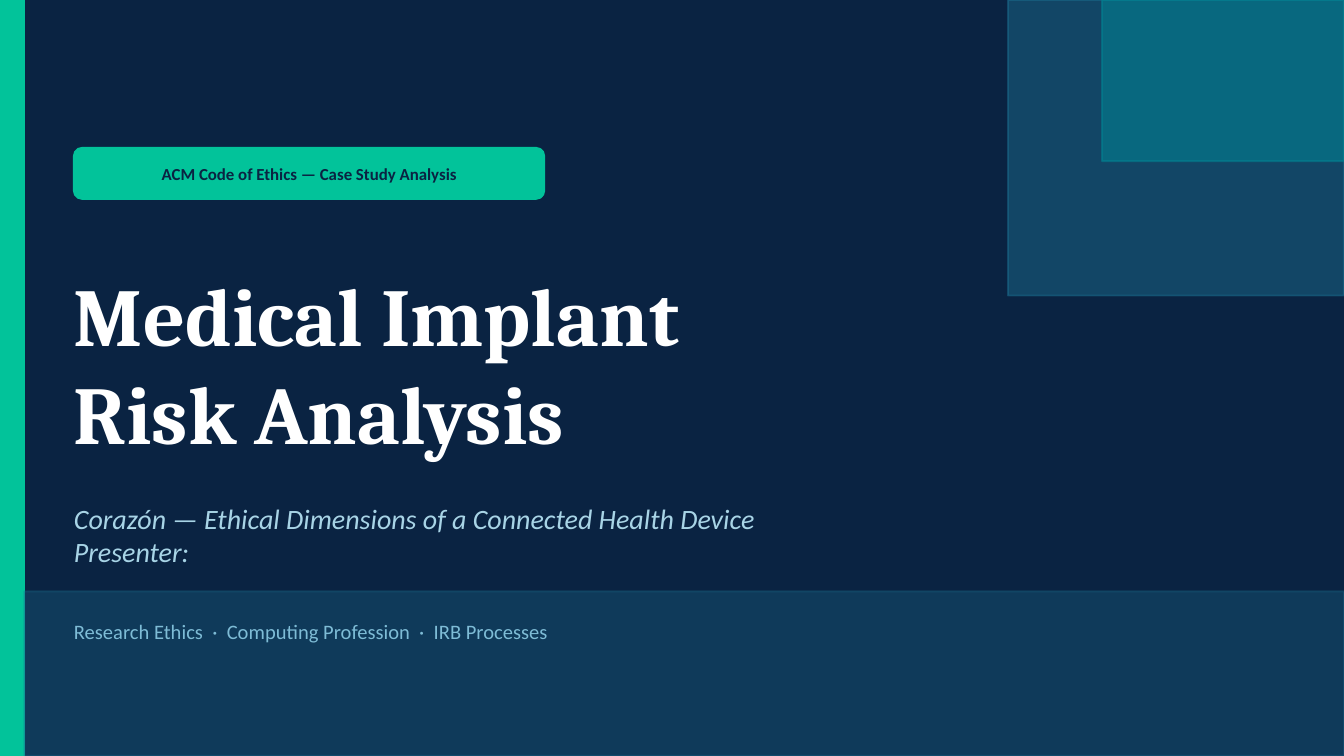
"""Build the title slide of a medical implant ethics case study."""
from dataclasses import dataclass

from lxml import etree
from pptx import Presentation
from pptx import util as u
from pptx.dml.color import RGBColor
from pptx.enum import shapes, text
from pptx.oxml.ns import qn


@dataclass(frozen=True)
class Theme:
    """Colours, fonts and type sizes of the slide."""

    navy: str = "0A2342"
    mint: str = "02C39A"
    blue: str = "1C7293"
    teal: str = "028090"
    white: str = "FFFFFF"
    pale: str = "A8D4E6"
    sky: str = "7EBCD6"
    heading: str = "Cambria"
    body: str = "Calibri"
    title_size: int = 44
    subtitle_size: int = 15
    topics_size: int = 11
    label_size: int = 9


THEME = Theme()
WIDTH = 10
HEIGHT = WIDTH * 9 / 16
EDGE = 0.18
MARGIN = 0.55
BAND_TOP = 4.4


def place(shape, left, top, width, height):
    """Move and size a shape, in inches."""
    shape.left, shape.top = u.Inches(left), u.Inches(top)
    shape.width, shape.height = u.Inches(width), u.Inches(height)


def write(shape, content, size, color, font=THEME.body, bold=False,
          italic=False, align=text.PP_ALIGN.LEFT):
    """Fill a shape with formatted text, one paragraph for each line."""
    frame = shape.text_frame
    frame.text = content
    frame.word_wrap = True
    frame.auto_size = text.MSO_AUTO_SIZE.NONE
    frame.vertical_anchor = text.MSO_ANCHOR.MIDDLE
    frame.margin_left = frame.margin_right = 0
    frame.margin_top = frame.margin_bottom = 0
    for paragraph in frame.paragraphs:
        paragraph.alignment = align
        paragraph.space_before = u.Pt(0)
        for run in paragraph.runs:
            run.font.name, run.font.size = font, u.Pt(size)
            run.font.bold, run.font.italic = bold, italic
            run.font.color.rgb = RGBColor.from_string(color)


def add_panel(slide, left, top, width, height, color, opacity=100,
              kind=shapes.MSO_SHAPE.RECTANGLE):
    """Add a panel whose fill and outline share a colour and opacity."""
    shape = slide.shapes.add_shape(kind, 0, 0, 0, 0)
    place(shape, left, top, width, height)
    shape.shadow.inherit = False
    shape.fill.solid()
    shape.fill.fore_color.rgb = RGBColor.from_string(color)
    shape.line.color.rgb = RGBColor.from_string(color)
    shape.line.width = u.Pt(1)
    if opacity < 100:
        for paint in shape.element.spPr.iter(qn("a:srgbClr")):
            etree.SubElement(paint, qn("a:alpha"), val=str(opacity * 1000))
    return shape


def add_label(slide, content, left, top, width, height):
    """Add a rounded label with centred text."""
    label = add_panel(slide, left, top, width, height, THEME.mint,
                      kind=shapes.MSO_SHAPE.ROUNDED_RECTANGLE)
    label.adjustments[0] = 0.16
    write(label, content, THEME.label_size, THEME.navy, bold=True,
          align=text.PP_ALIGN.CENTER)


def add_decoration(slide):
    """Add the edge stripe, the corner blocks and the bottom band."""
    add_panel(slide, 0, 0, EDGE, HEIGHT, THEME.mint)
    for width, height, color, opacity in ((2.5, 2.2, THEME.blue, 45),
                                          (1.8, 1.2, THEME.teal, 60)):
        add_panel(slide, WIDTH - width, 0, width, height, color, opacity)
    add_panel(slide, EDGE, BAND_TOP, WIDTH - EDGE, HEIGHT - BAND_TOP,
              THEME.blue, 30)


def main():
    """Build and save the slide."""
    presentation = Presentation()
    presentation.slide_width = u.Inches(WIDTH)
    presentation.slide_height = u.Inches(HEIGHT)
    slide = presentation.slides.add_slide(presentation.slide_layouts[0])
    slide.background.fill.solid()
    slide.background.fill.fore_color.rgb = RGBColor.from_string(THEME.navy)
    add_decoration(slide)
    add_label(slide, "ACM Code of Ethics — Case Study Analysis",
              MARGIN, 1.1, 3.5, 0.38)

    title, subtitle = slide.shapes.title, slide.placeholders[1]
    place(title, MARGIN, 1.65, 8.5, 2.1)
    write(title, "Medical Implant\nRisk Analysis", THEME.title_size,
          THEME.white, font=THEME.heading, bold=True)
    place(subtitle, MARGIN, 3.56, 8, 0.84)
    write(subtitle, "Corazón — Ethical Dimensions of a Connected Health Device"
          "\nPresenter:", THEME.subtitle_size, THEME.pale, italic=True)

    topics = slide.shapes.add_textbox(0, 0, 0, 0)
    place(topics, MARGIN, 4.5, 8.5, 0.4)
    write(topics, "Research Ethics  ·  Computing Profession  ·  IRB Processes",
          THEME.topics_size, THEME.sky)
    presentation.save("out.pptx")


if __name__ == "__main__":
    main()
